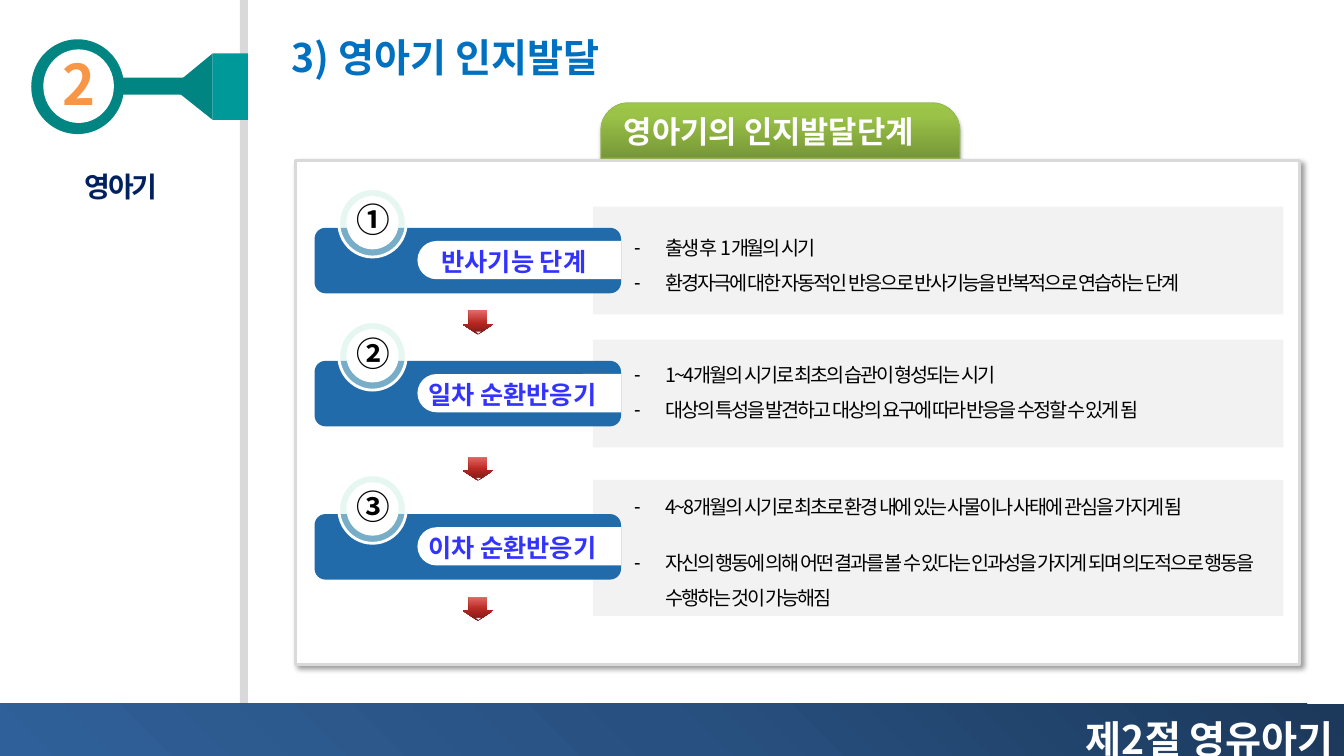
from dataclasses import dataclass

from lxml import etree
from pptx import Presentation
from pptx.dml.color import RGBColor
from pptx.enum.shapes import MSO_SHAPE
from pptx.enum.text import MSO_ANCHOR, MSO_AUTO_SIZE, PP_ALIGN
from pptx.oxml.ns import qn
from pptx.util import Inches, Pt

RECT, OVAL, ROUND = MSO_SHAPE.RECTANGLE, MSO_SHAPE.OVAL, MSO_SHAPE.ROUNDED_RECTANGLE
TAB, ARROW, MERGE = MSO_SHAPE.ROUND_2_SAME_RECTANGLE, MSO_SHAPE.DOWN_ARROW, MSO_SHAPE.FLOWCHART_MERGE
TOP, FIT, FIXED = MSO_ANCHOR.TOP, MSO_AUTO_SIZE.SHAPE_TO_FIT_TEXT, MSO_AUTO_SIZE.NONE
LEFT, MID, RIGHT = PP_ALIGN.LEFT, PP_ALIGN.CENTER, PP_ALIGN.RIGHT

Box = tuple[float, float, float, float]
Stops = tuple[tuple[int, str], ...]


@dataclass(frozen=True)
class Theme:
    font: str = "Noto Sans CJK KR"
    white: str = "FFFFFF"
    black: str = "000000"
    gray: str = "D9D9D9"
    pale: str = "F2F2F2"
    teal: str = "008582"
    aqua: str = "009999"
    mint: str = "CFF0E5"
    blue: str = "226BAB"
    lime: str = "98B955"
    orange: str = "F79646"
    navy: str = "002060"
    sky: str = "0070C0"
    violet: str = "3333FF"
    base: Stops = ((0, "1C395B"), (50, "285181"), (100, "306099"))
    green: Stops = ((0, "779737"), (80, "9BC348"), (100, "9DC746"))
    red: Stops = ((0, "761916"), (48, "B82722"), (100, "E26A67"))
    huge: int = 40
    head: int = 28
    mark: int = 24
    tab: int = 22
    side: int = 20
    label: int = 18
    body: int = 14


@dataclass(frozen=True)
class Type:
    size: int
    color: str
    align: PP_ALIGN = LEFT
    bold: bool = True
    wrap: bool = False
    lead: float = 1.17
    track: int = 0


@dataclass(frozen=True)
class Stage:
    mark: str
    name: str
    name_x: float
    name_w: float
    bar: float
    panel: float
    high: float
    arrow: float
    list_y: float
    slot: int
    lines: tuple[str, ...]
    gap: int = 0


T = Theme()
NUM = Type(T.huge, T.orange, MID)
FOOT = Type(T.head, T.white, RIGHT, wrap=True, lead=1.8)
SIDE = Type(T.side, T.navy, MID, wrap=True, lead=1.8, track=-150)
HEAD = Type(T.head, T.sky)
CAP = Type(T.tab, T.white)
MARK = Type(T.mark, T.black)
NAME = Type(T.label, T.violet, lead=1.25)
BODY = Type(T.body, T.black, bold=False, wrap=True, lead=1.79, track=-150)

STAGES = (
    Stage("①", "반사기능 단계", 4.28, 1.81, 2.26, 2.05, 1.07, 3.08, 2.18, 2,
          ("출생 후 1개월의 시기",
           "환경자극에 대한 자동적인 반응으로 반사기능을 반복적으로 연습하는 단계")),
    Stage("②", "일차 순환반응기", 4.15, 2.06, 3.58, 3.37, 1.07, 4.53, 3.44, 4,
          ("1~4개월의 시기로 최초의 습관이 형성되는 시기",
           "대상의 특성을 발견하고 대상의 요구에 따라 반응을 수정할 수 있게 됨")),
    Stage("③", "이차 순환반응기", 4.15, 2.06, 5.1, 4.76, 1.35, 5.92, 4.75, 1,
          ("4~8개월의 시기로 최초로 환경 내에 있는 사물이나 사태에 관심을 가지게 됨",
           "자신의 행동에 의해 어떤 결과를 볼 수 있다는 인과성을 가지게 되며 "
           "의도적으로 행동을 수행하는 것이 가능해짐"), 15),
)


def add(root, tag: str, **attrs):
    return etree.SubElement(root, qn(tag), {k: str(v) for k, v in attrs.items()})


def paint(shape, fill: str, line: str = "", width: float = 0) -> None:
    shape.shadow.inherit = False
    shape.fill.solid()
    shape.fill.fore_color.rgb = RGBColor.from_string(fill)
    if line:
        shape.line.color.rgb = RGBColor.from_string(line)
        shape.line.width = Pt(width)
    else:
        shape.line.fill.background()


def draw(slide, kind, box: Box, fill: str, line: str = "", width: float = 0, adj=()):
    shape = slide.shapes.add_shape(kind, *map(Inches, box))
    paint(shape, fill, line, width)
    for i, value in enumerate(adj):
        shape.adjustments[i] = value
    return shape


def blend(shape, stops: Stops, angle: int) -> None:
    old = shape.element.spPr.find(qn("a:solidFill"))
    grad = etree.Element(qn("a:gradFill"), rotWithShape="1")
    items = add(grad, "a:gsLst")
    for pos, color in stops:
        add(add(items, "a:gs", pos=pos * 1000), "a:srgbClr", val=color)
    add(grad, "a:lin", ang=angle * 60000, scaled=0)
    old.getparent().replace(old, grad)


def shade(shape, alpha: int, blur: float, dist: float, angle: int) -> None:
    root = shape.element.spPr.find(qn("a:effectLst"))
    cast = add(root, "a:outerShdw", blurRad=Pt(blur), dist=Pt(dist),
               dir=angle * 60000, algn="t", rotWithShape=0)
    add(add(cast, "a:srgbClr", val=T.black), "a:alpha", val=alpha * 1000)


def write(shape, lines: tuple[str, ...], kind: Type, dash: bool = False, gap: int = 0) -> None:
    frame = shape.text_frame
    form = {"word_wrap": kind.wrap, "vertical_anchor": TOP,
            "auto_size": FIXED if kind.wrap else FIT}
    for key, value in form.items():
        setattr(frame, key, value)
    for i, line in enumerate(lines):
        para = frame.paragraphs[0] if i == 0 else frame.add_paragraph()
        if dash:
            props = para._p.get_or_add_pPr()
            props.set("marL", str(Inches(0.31)))
            props.set("indent", str(-Inches(0.31)))
            add(props, "a:buChar", char="-")
        form = {"alignment": kind.align, "line_spacing": Pt(round(kind.size * kind.lead)),
                "space_before": Pt(gap if i else 0), "space_after": Pt(0)}
        for key, value in form.items():
            setattr(para, key, value)
        run = para.add_run()
        run.text = line
        run.font.color.rgb = RGBColor.from_string(kind.color)
        form = {"name": T.font, "size": Pt(kind.size), "bold": kind.bold}
        for key, value in form.items():
            setattr(run.font, key, value)
        props = run._r.get_or_add_rPr()
        add(props, "a:ea", typeface=T.font)
        if kind.track:
            props.set("spc", str(kind.track))


def label(slide, box: Box, text: str, kind: Type) -> None:
    write(slide.shapes.add_textbox(*map(Inches, box)), (text,), kind)


def place(shape, box: Box) -> None:
    for key, value in zip(("left", "top", "width", "height"), box):
        setattr(shape, key, Inches(value))
    shape.element.getparent().append(shape.element)


def frame_up(slide) -> None:
    draw(slide, RECT, (2.38, 0, 0.08, 7.06), T.gray)
    draw(slide, OVAL, (0.31, 0.39, 0.92, 0.94), T.teal)
    draw(slide, OVAL, (0.43, 0.49, 0.7, 0.73), T.white)
    pen = slide.shapes.build_freeform(Inches(1.77), Inches(0.81), 1.0)
    points = ((2.11, 0.53), (2.11, 1.19), (1.77, 0.92))
    pen.add_line_segments([(Inches(x), Inches(y)) for x, y in points])
    paint(pen.convert_to_shape(), T.teal)
    draw(slide, RECT, (2.11, 0.53, 0.35, 0.66), T.aqua)
    draw(slide, RECT, (1.17, 0.77, 0.77, 0.17), T.teal)
    label(slide, (0.52, 0.46, 0.53, 0.77), "2", NUM)
    blend(draw(slide, RECT, (0, 6.98, 13.33, 0.55), T.blue), T.base, 135)
    label(slide, (6.43, 6.82, 6.9, 0.81), "제2절 영유아기", FOOT)
    label(slide, (-0.01, 1.47, 2.42, 0.54), "영아기", SIDE)
    place(slide.shapes.title, (2.79, 0.29, 3.56, 0.57))
    write(slide.shapes.title, ("3) 영아기 인지발달",), HEAD)
    tab = draw(slide, TAB, (5.96, 1.02, 3.56, 0.55), T.lime, T.lime, 0.75, (0.5, 0))
    blend(tab, T.green, 270)
    shade(tab, 35, 3.1, 1.8, 90)
    card = draw(slide, RECT, (2.93, 1.59, 9.96, 5), T.white, T.gray, 2)
    shade(card, 40, 4, 3, 45)
    label(slide, (6.09, 1.07, 3.4, 0.47), "영아기의 인지발달단계", CAP)


def show(slide, stage: Stage) -> None:
    bar = stage.bar
    draw(slide, RECT, (5.88, stage.panel, 6.85, stage.high), T.pale)
    draw(slide, ROUND, (3.12, bar, 3.04, 0.65), T.blue)
    pill = draw(slide, TAB, (4.96, bar - 0.69, 0.38, 2.02), T.white, adj=(0.5, 0))
    pill.rotation = 270
    ring = draw(slide, OVAL, (3.36, bar - 0.39, 0.67, 0.68), T.mint, T.white, 2)
    tint = ring.element.spPr.find(qn("a:solidFill"))[0]
    add(tint, "a:alpha", val=50000)
    draw(slide, OVAL, (3.45, bar - 0.3, 0.49, 0.5), T.white, T.white, 2)
    arrow = draw(slide, ARROW, (4.59, stage.arrow, 0.3, 0.24), T.blue, adj=(0.6, 0.42))
    blend(arrow, T.red, 270)
    draw(slide, MERGE, (4.72, stage.arrow + 0.21, 0.05, 0.02), T.pale)
    label(slide, (3.44, bar - 0.32, 0.54, 0.5), stage.mark, MARK)
    label(slide, (stage.name_x, bar + 0.13, stage.name_w, 0.4), stage.name, NAME)
    body = next(p for p in slide.placeholders if p.placeholder_format.idx == stage.slot)
    place(body, (6.19, stage.list_y, 6.66, stage.high))
    write(body, stage.lines, BODY, True, stage.gap)


def main() -> None:
    deck = Presentation()
    deck.slide_width, deck.slide_height = Inches(13.33), Inches(7.5)
    slide = deck.slides.add_slide(deck.slide_layouts[4])
    frame_up(slide)
    for stage in STAGES:
        show(slide, stage)
    for spare in list(slide.placeholders):
        if not spare.text_frame.text:
            spare.element.getparent().remove(spare.element)
    deck.save("out.pptx")


if __name__ == "__main__":
    main()
